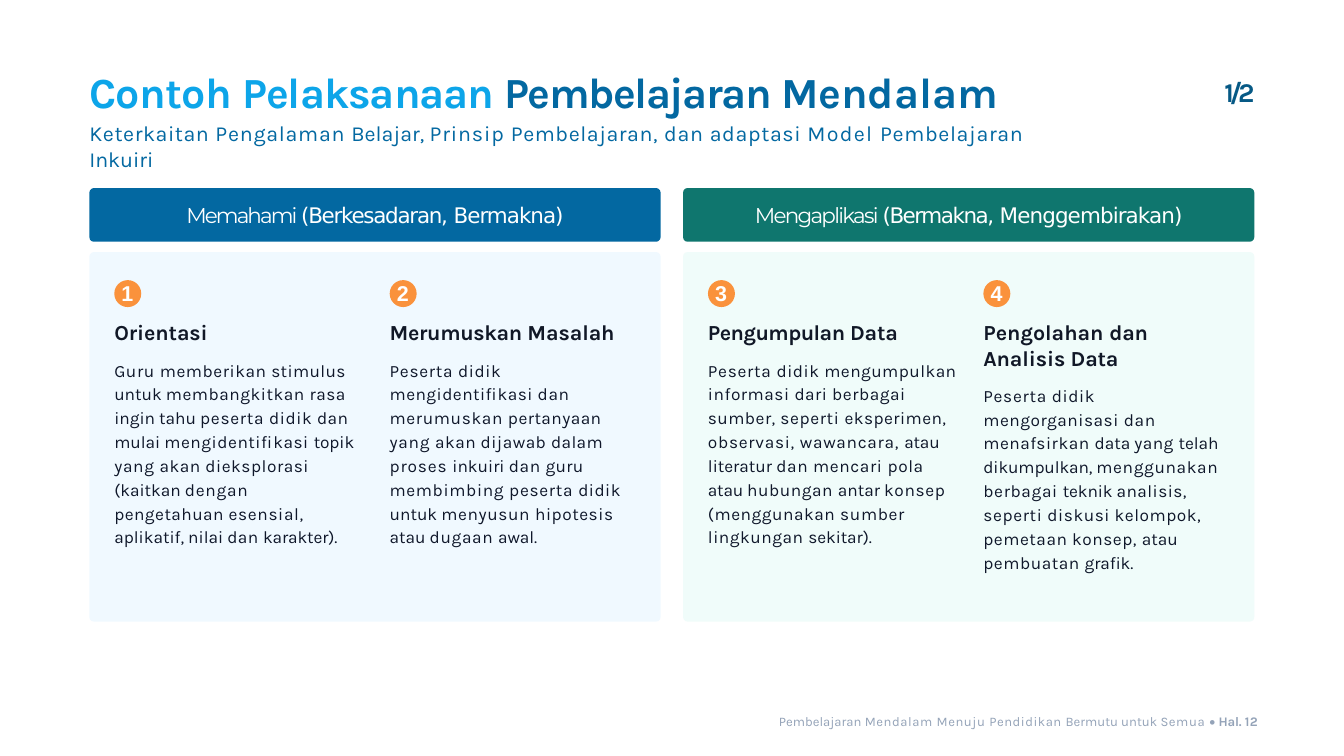
from pptx import Presentation
from pptx.dml.color import RGBColor
from pptx.enum.shapes import MSO_SHAPE
from pptx.enum.text import MSO_ANCHOR, MSO_AUTO_SIZE, PP_ALIGN
from pptx.util import Cm, Pt

ROUNDED, OVAL = MSO_SHAPE.ROUNDED_RECTANGLE, MSO_SHAPE.OVAL
LEFT, CENTER = PP_ALIGN.LEFT, PP_ALIGN.CENTER
TOP, MIDDLE = MSO_ANCHOR.TOP, MSO_ANCHOR.MIDDLE
NO_AUTOFIT = MSO_AUTO_SIZE.NONE

COLORS = {
    "sky": "0DA5E9", "blue": "0368A1", "page": "065985", "teal": "0F766E",
    "pale_blue": "F0F9FF", "pale_teal": "F0FCFA", "orange": "FA923C",
    "heading": "111827", "body": "0F172A", "footer": "94A3B8", "white": "FFFFFF",
}

# Lengths in cm
MARGIN, PHASE_PITCH, PHASE_WIDTH = 3.38, 22.44, 21.59
BAR_TOP, BAR_HEIGHT = 7.11, 2.03
PANEL_TOP, PANEL_HEIGHT = 9.53, 13.97
STEP_INSET, STEP_PITCH = 0.94, 10.41
BADGE_TOP, BADGE_SIZE = 10.59, 1.02
CORNER = 0.17

# Every run is (text, letter spacing in points).
# A step is (text width, heading runs, space before body, body runs).
PHASES = [
    {
        "bar": "blue", "panel": "pale_blue",
        "name": ("Memahami ", -2.1),
        "principles": [("(Berkesadaran, ", -1.4), ("Bermakna)", -1.1)],
        "steps": [
            (9.25, [("Orientasi", -0.1)], 12.4, [
                ("Guru ", 0.7), ("memberikan ", 0.6), ("stimulus ", 0.4),
                ("untuk ", 0), ("membangkitkan ", 0.6), ("rasa ", 0.5),
                ("ingin tahu ", 0), ("peserta ", 0.8), ("didik ", 0.6),
                ("dan ", 0.4), ("mulai ", 0), ("mengidentifikasi ", 0.6),
                ("topik ", -0.1), ("yang ", 0.8), ("akan ", 0.5),
                ("dieksplorasi ", 0.6), ("(kaitkan ", 0), ("dengan ", 0.8),
                ("pengetahuan ", 0.5), ("esensial, ", 0.7),
                ("aplikatif, nilai ", 0), ("dan ", 0.4), ("karakter).", -0.1)]),
            (9.32, [("Merumuskan ", -0.4), ("Masalah", -0.1)], 12.4, [
                ("Peserta ", 0.8), ("didik ", 0.6), ("mengidentifikasi ", 0.5),
                ("dan merumuskan ", 0.7), ("pertanyaan ", 0.5), ("yang ", 0.8),
                ("akan dijawab ", 0.5), ("dalam ", 0.4), ("proses ", 0.9),
                ("inkuiri ", 0), ("dan ", 0.7), ("guru ", 0.3),
                ("membimbing ", 0.7), ("peserta ", 0.8), ("didik ", 0.5),
                ("untuk ", 0), ("menyusun ", 0.7), ("hipotesis ", 0.6),
                ("atau ", 0), ("dugaan ", 0.7), ("awal.", -0.1)]),
        ],
    },
    {
        "bar": "teal", "panel": "pale_teal",
        "name": ("Mengaplikasi ", -1.9),
        "principles": [("(Bermakna, ", -1.6), ("Menggembirakan)", -1)],
        "steps": [
            (9.45, [("Pengumpulan ", -0.6), ("Data", -0.2)], 12.4, [
                ("Peserta ", 0.8), ("didik ", 0.6), ("mengumpulkan ", 0.5),
                ("informasi ", 0.6), ("dari ", 0.5), ("berbagai ", 0.6),
                ("sumber, ", 0.5), ("seperti ", 0.7), ("eksperimen, ", 0.5),
                ("observasi, wawancara, ", 0.8), ("atau ", -0.2),
                ("literatur ", 0), ("dan mencari ", 0.7), ("pola ", 0.6),
                ("atau ", -0.2), ("hubungan ", 0.6), ("antar ", 0),
                ("konsep ", 0.7), ("(menggunakan ", 0.6), ("sumber ", 0.7),
                ("lingkungan ", 0.6), ("sekitar).", -0.1)]),
            (9.4, [("Pengolahan ", 0), ("dan ", -0.2), ("Analisis ", -0.1),
                   ("Data", -0.2)], 11.8, [
                ("Peserta ", 0.8), ("didik mengorganisasi ", 0.6),
                ("dan ", 0.7), ("menafsirkan ", 0.6), ("data ", 0),
                ("yang ", 0.5), ("telah ", 0), ("dikumpulkan, ", -0.1),
                ("menggunakan berbagai ", 0.7), ("teknik ", -0.1),
                ("analisis, ", 0.5), ("seperti ", 0.7),
                ("diskusi kelompok, pemetaan konsep, ", 0.6), ("atau ", 0),
                ("pembuatan ", 0.6), ("grafik.", -0.1)]),
        ],
    },
]


def add_runs(paragraph, runs, size, color, font="Karla", bold=False):
    for text, spacing in runs:
        run = paragraph.add_run()
        run.text = text
        run.font.size, run.font.name, run.font.bold = Pt(size), font, bold
        run.font.color.rgb = RGBColor.from_string(COLORS[color])
        run.font._element.set("spc", str(round(spacing * 100)))


def format_paragraph(paragraph, before=0, line=1.0, indent=0.03, align=LEFT):
    paragraph._p.get_or_add_pPr().set("marL", str(Cm(indent)))
    paragraph.alignment, paragraph.line_spacing = align, line
    paragraph.space_before, paragraph.space_after = Pt(before), Pt(0)
    return paragraph


def prepare_frame(frame, inset_top=0.03, anchor=TOP):
    frame.word_wrap, frame.auto_size = True, NO_AUTOFIT
    frame.vertical_anchor = anchor
    frame.margin_left = frame.margin_right = frame.margin_bottom = 0
    frame.margin_top = Cm(inset_top)
    return frame


def add_text_box(slide, left, top, width, height, inset_top=0.03):
    box = slide.shapes.add_textbox(Cm(left), Cm(top), Cm(width), Cm(height))
    return prepare_frame(box.text_frame, inset_top)


def add_filled(slide, kind, left, top, width, height, color):
    shape = slide.shapes.add_shape(kind, Cm(left), Cm(top), Cm(width), Cm(height))
    shape.shadow.inherit = False
    shape.fill.solid()
    shape.fill.fore_color.rgb = RGBColor.from_string(COLORS[color])
    shape.line.fill.background()
    if kind == ROUNDED:
        shape.adjustments[0] = CORNER / min(width, height)
    return shape


def add_title(slide):
    title = slide.shapes.title
    title.left, title.top = Cm(3.35), Cm(2.21)
    title.width, title.height = Cm(36.63), Cm(3.35)
    frame = prepare_frame(title.text_frame, inset_top=0.28)
    heading = format_paragraph(frame.paragraphs[0])
    add_runs(heading, [("Contoh ", -0.7), ("Pelaksanaan ", -1.1)], 46, "sky", bold=True)
    add_runs(heading, [("Pembelajaran ", -1.6), ("Mendalam", -0.1)], 46, "blue", bold=True)
    subtitle = format_paragraph(frame.add_paragraph(), before=3.3)
    add_runs(subtitle, [
        ("Keterkaitan ", 0.6), ("Pengalaman ", 0.8), ("Belajar, ", 0),
        ("Prinsip ", 0.9), ("Pembelajaran, ", 0.6), ("dan ", 0.8),
        ("adaptasi ", 0.7), ("Model ", 1.4), ("Pembelajaran ", 0.7),
        ("Inkuiri", -0.1)], 23, "blue")


def add_step(slide, left, number, step):
    width, heading, body_gap, body = step
    add_filled(slide, OVAL, left, BADGE_TOP, BADGE_SIZE, BADGE_SIZE, "orange")
    frame = add_text_box(slide, left - 0.03, 10.01, width, 10.7, inset_top=0.56)
    add_runs(format_paragraph(frame.paragraphs[0], indent=0.3),
             [(str(number), -0.5)], 23, "white", "Arial", bold=True)
    add_runs(format_paragraph(frame.add_paragraph(), before=15.1),
             heading, 23, "heading", bold=True)
    add_runs(format_paragraph(frame.add_paragraph(), before=body_gap, line=1.15),
             body, 18.5, "body")


def add_phase(slide, left, phase, first_number):
    """Header bar and panel with the steps of one learning phase."""
    bar = add_filled(slide, ROUNDED, left, BAR_TOP, PHASE_WIDTH, BAR_HEIGHT, phase["bar"])
    frame = prepare_frame(bar.text_frame, inset_top=0, anchor=MIDDLE)
    label = format_paragraph(frame.paragraphs[0], indent=0, align=CENTER)
    add_runs(label, [phase["name"]], 23, "white", "Montserrat")
    add_runs(label, phase["principles"], 23, "white", "DejaVu Sans")
    add_filled(slide, ROUNDED, left, PANEL_TOP, PHASE_WIDTH, PANEL_HEIGHT, phase["panel"])
    for index, step in enumerate(phase["steps"]):
        add_step(slide, left + STEP_INSET + index * STEP_PITCH, first_number + index, step)


def add_part_number(slide):
    frame = add_text_box(slide, 46.25, 2.84, 1.52, 1.3)
    add_runs(format_paragraph(frame.paragraphs[0]), [("1/2", -4.6)], 29, "page", bold=True)


def add_footer(slide):
    frame = add_text_box(slide, 29.41, 26.95, 18.24, 0.69)
    footer = format_paragraph(frame.paragraphs[0])
    add_runs(footer, [
        ("Pembelajaran ", 0), ("Mendalam Menuju ", 0.6), ("Pendidikan ", 0.5),
        ("Bermutu untuk ", 0), ("Semua ", 0.6)], 14, "footer")
    add_runs(footer, [("• ", 0)], 14, "footer", "Calibri")
    add_runs(footer, [("Hal. ", -0.2), ("12", 0.5)], 14, "footer", bold=True)


def main():
    deck = Presentation()
    deck.slide_width, deck.slide_height = Cm(50.8), Cm(28.58)
    slide = deck.slides.add_slide(deck.slide_layouts[5])
    add_title(slide)
    add_part_number(slide)
    first_number = 1
    for index, phase in enumerate(PHASES):
        add_phase(slide, MARGIN + index * PHASE_PITCH, phase, first_number)
        first_number += len(phase["steps"])
    add_footer(slide)
    deck.save("out.pptx")


if __name__ == "__main__":
    main()
